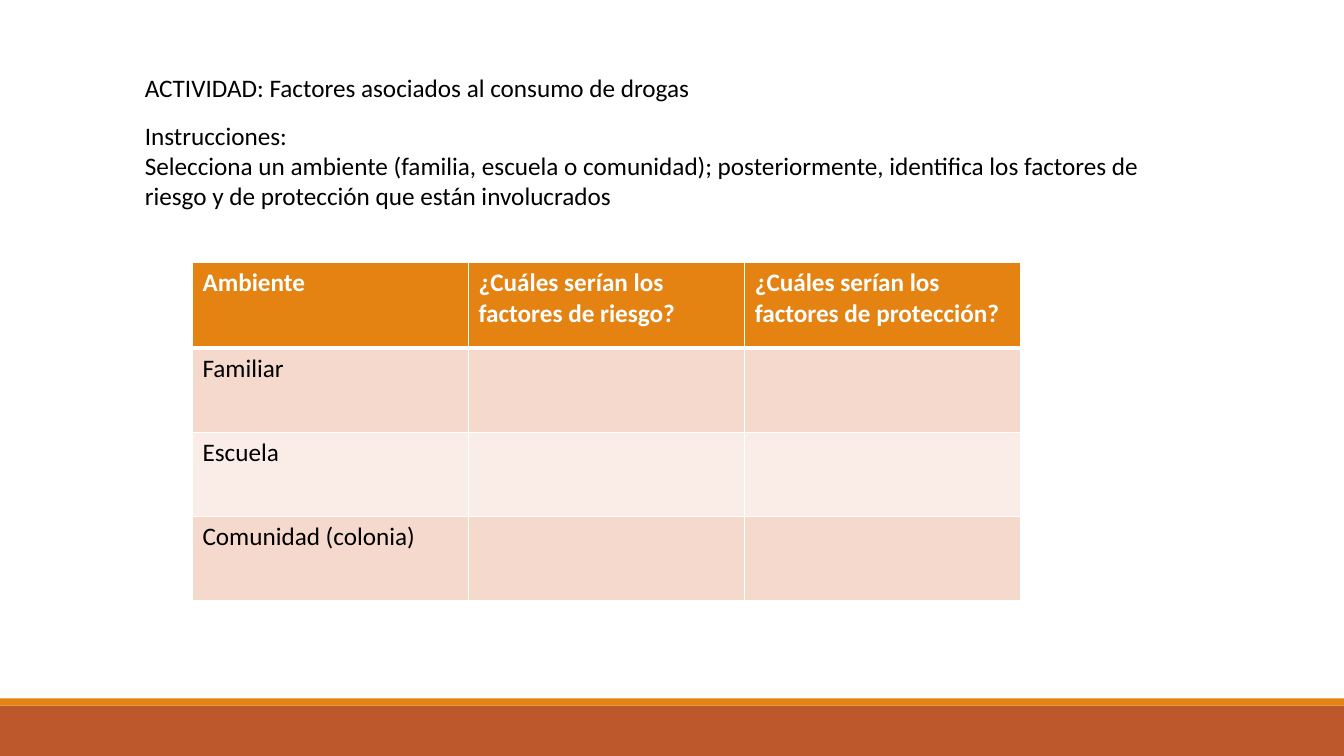
from dataclasses import dataclass

from lxml import etree
from pptx import Presentation
from pptx.dml.color import RGBColor
from pptx.enum.shapes import MSO_SHAPE
from pptx.enum.text import MSO_AUTO_SIZE
from pptx.oxml.ns import qn
from pptx.util import Cm, Pt

RECT = MSO_SHAPE.RECTANGLE
GROW = MSO_AUTO_SIZE.SHAPE_TO_FIT_TEXT
WIDE, HIGH = 33.87, 19.05


@dataclass(frozen=True)
class Theme:
    font: str = "Calibri"
    size: int = 18
    ink: str = "000000"
    white: str = "FFFFFF"
    orange: str = "E48312"
    rust: str = "BD582C"
    bands: tuple = ("F5D9CC", "FAEDE7")
    thin: int = 1
    thick: int = 3


class Page:
    def __init__(self, slide, theme):
        self.slide = slide
        self.theme = theme

    def paint(self, fill, color):
        fill.solid()
        fill.fore_color.rgb = RGBColor.from_string(color)

    def add_run(self, para, text, color, bold=False):
        run = para.add_run()
        run.text = text
        font = run.font
        font.name = self.theme.font
        font.size = Pt(self.theme.size)
        font.bold = bold
        font.color.rgb = RGBColor.from_string(color)

    def bar(self, top, height, color):
        shape = self.slide.shapes.add_shape(RECT, 0, Cm(top), Cm(WIDE), Cm(height))
        shape.shadow.inherit = False
        self.paint(shape.fill, color)
        shape.line.fill.background()

    def text(self, left, top, width, height, lines, wrap=True):
        box = self.slide.shapes.add_textbox(Cm(left), Cm(top), Cm(width), Cm(height))
        frame = box.text_frame
        frame.word_wrap = wrap
        frame.auto_size = GROW
        for i, line in enumerate(lines):
            para = frame.add_paragraph() if i else frame.paragraphs[0]
            self.add_run(para, line, self.theme.ink)

    def edge(self, cell, side, width):
        props = cell._tc.get_or_add_tcPr()
        line = etree.SubElement(props, qn(f"a:ln{side}"), w=str(Pt(width)))
        fill = etree.SubElement(line, qn("a:solidFill"))
        etree.SubElement(fill, qn("a:srgbClr"), val=self.theme.white)

    def cell(self, cell, text, row):
        look = self.theme
        head = row == 0
        # Borders precede the fill in the cell properties
        for side in "LRTB":
            heavy = (head and side == "B") or (row == 1 and side == "T")
            self.edge(cell, side, look.thick if heavy else look.thin)
        self.paint(cell.fill, look.orange if head else look.bands[(row - 1) % 2])
        if text:
            color = look.white if head else look.ink
            self.add_run(cell.text_frame.paragraphs[0], text, color, head)

    def table(self, left, top, width, heights, rows):
        count = len(rows[0])
        frame = self.slide.shapes.add_table(
            len(rows), count, Cm(left), Cm(top), Cm(width), Cm(sum(heights)))
        table = frame.table
        for col in table.columns:
            col.width = Cm(width / count)
        for i, (height, texts) in enumerate(zip(heights, rows)):
            table.rows[i].height = Cm(height)
            for j, text in enumerate(texts):
                self.cell(table.cell(i, j), text, i)


def main():
    deck = Presentation()
    deck.slide_width, deck.slide_height = Cm(WIDE), Cm(HIGH)
    page = Page(deck.slides.add_slide(deck.slide_layouts[6]), Theme())

    # Footer bands
    page.bar(17.78, 1.27, page.theme.rust)
    page.bar(17.6, 0.18, page.theme.orange)

    # Title and instructions
    page.text(3.4, 1.7, 14.4, 1.03,
              ["ACTIVIDAD: Factores asociados al consumo de drogas"], wrap=False)
    page.text(3.4, 2.9, 26.16, 2.56, [
        "Instrucciones:",
        "Selecciona un ambiente (familia, escuela o comunidad); posteriormente, "
        "identifica los factores de riesgo y de protección que están involucrados",
    ])

    # Activity table
    places = ["Familiar", "Escuela", "Comunidad (colonia)"]
    rows = [["Ambiente", "¿Cuáles serían los factores de riesgo?",
             "¿Cuáles serían los factores de protección?"]]
    rows += [[place, "", ""] for place in places]
    page.table(4.85, 6.62, 20.88, [2.15] + [2.12] * len(places), rows)

    deck.save("out.pptx")


if __name__ == "__main__":
    main()
